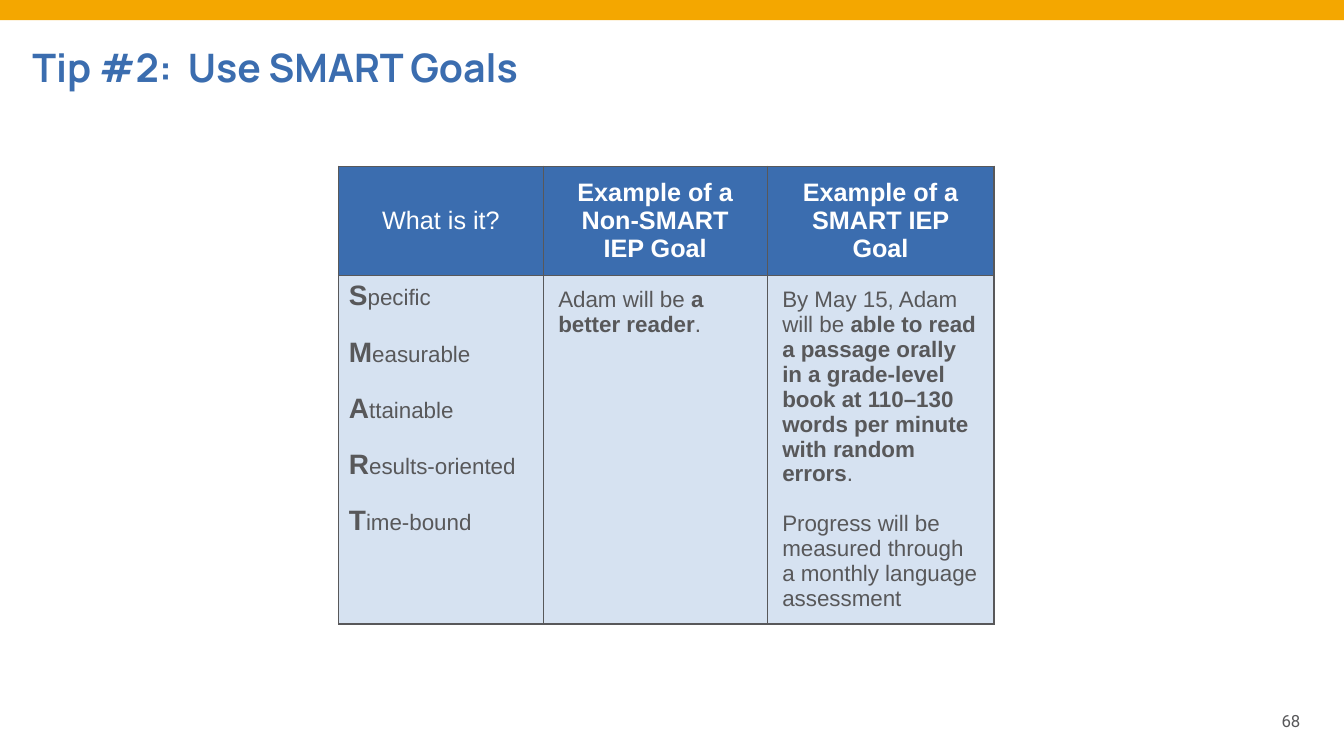
from dataclasses import dataclass

from lxml.etree import SubElement
from pptx import Presentation
from pptx.dml.color import RGBColor
from pptx.enum.shapes import MSO_SHAPE
from pptx.enum.text import MSO_ANCHOR, PP_ALIGN
from pptx.oxml.ns import qn
from pptx.util import Pt

BLUE, PALE, GOLD = "3B6DAF", "D6E2F1", "F4A700"
GREY, WHITE = "58585A", "FFFFFF"
GAP = 17.9  # space between paragraphs


@dataclass
class Piece:
    text: str
    size: float = 16
    bold: bool = False


@dataclass
class Entry:
    lines: list[list[Piece]]
    head: bool = False
    pad: tuple[float, float] = (10.8, 8.64)


def color(code: str) -> RGBColor:
    return RGBColor.from_string(code)


def style(run, size: float, face: str, code: str, bold: bool = False) -> None:
    run.font.size, run.font.name, run.font.bold = Pt(size), face, bold
    run.font.color.rgb = color(code)


def place(shape, left: float, top: float, width: float, height: float) -> None:
    shape.left, shape.top = Pt(left), Pt(top)
    shape.width, shape.height = Pt(width), Pt(height)


def edge(cell, code: str, width: float) -> None:
    """Give a cell the same line on all four sides, ahead of its fill."""
    props = cell._tc.get_or_add_tcPr()
    for spot, side in enumerate(("lnL", "lnR", "lnT", "lnB")):
        line = SubElement(props, qn(f"a:{side}"), w=str(Pt(width)))
        fill = SubElement(line, qn("a:solidFill"))
        SubElement(fill, qn("a:srgbClr"), val=code)
        props.insert(spot, line)


def draw(cell, entry: Entry) -> None:
    side, end = entry.pad
    cell.margin_left = cell.margin_right = Pt(side)
    cell.margin_top = cell.margin_bottom = Pt(end)
    cell.vertical_anchor = MSO_ANCHOR.MIDDLE if entry.head else MSO_ANCHOR.TOP
    cell.fill.solid()
    cell.fill.fore_color.rgb = color(BLUE if entry.head else PALE)
    edge(cell, GREY, 1)
    frame = cell.text_frame
    for row, line in enumerate(entry.lines):
        para = frame.add_paragraph() if row else frame.paragraphs[0]
        para.alignment = PP_ALIGN.CENTER if entry.head else PP_ALIGN.LEFT
        para.space_before = Pt(GAP if row else 0)
        for piece in line:
            run = para.add_run()
            run.text = piece.text
            style(run, piece.size, "Arial", WHITE if entry.head else GREY, piece.bold)


WORDS = ["Specific", "Measurable", "Attainable", "Results-oriented", "Time-bound"]
HEADS = [
    Entry([[Piece("What is it?", 18)]], True, (7.2, 3.6)),
    Entry([[Piece("Example of a Non-SMART IEP Goal", 18, True)]], True),
    Entry([[Piece("Example of a SMART IEP Goal", 18, True)]], True),
]
BODY = [
    Entry([[Piece(word[0], 20, True), Piece(word[1:])] for word in WORDS], pad=(7.2, 3.6)),
    Entry([[Piece("Adam will be "), Piece("a better reader", bold=True), Piece(".")]]),
    Entry([
        [
            Piece("By May 15, Adam will be "),
            Piece("able to read a passage orally in a grade-level book at "
                  "110–130 words per minute with random errors", bold=True),
            Piece("."),
        ],
        [Piece("Progress will be measured through a monthly language assessment")],
    ]),
]
COLS, ROWS = (146, 160, 162), (78, 249)


def main() -> None:
    deck = Presentation()
    deck.slide_width, deck.slide_height = Pt(960), Pt(540)
    slide = deck.slides.add_slide(deck.slide_layouts[5])
    shapes = slide.shapes

    # Top band
    band = shapes.add_shape(MSO_SHAPE.RECTANGLE, 0, 0, Pt(960), Pt(14.4))
    band.shadow.inherit = False
    band.fill.solid()
    band.fill.fore_color.rgb = color(GOLD)
    band.line.fill.background()

    # Title
    title = shapes.title
    place(title, 16, 24, 864, 44.6)
    frame = title.text_frame
    frame.text = "Tip #2:  Use SMART Goals"
    frame.vertical_anchor = MSO_ANCHOR.TOP
    frame.margin_left = frame.margin_right = Pt(7.2)
    frame.margin_top = frame.margin_bottom = Pt(7.2)
    frame.paragraphs[0].alignment = PP_ALIGN.LEFT
    style(frame.paragraphs[0].runs[0], 28, "Manrope", BLUE, True)

    # Goal table
    table = shapes.add_table(2, 3, Pt(242), Pt(118.8), Pt(sum(COLS)), Pt(sum(ROWS))).table
    table.first_row = table.horz_banding = False
    for col, width in zip(table.columns, COLS):
        col.width = Pt(width)
    for row, height, items in zip(table.rows, ROWS, (HEADS, BODY)):
        row.height = Pt(height)
        for cell, entry in zip(row.cells, items):
            draw(cell, entry)

    # Page number
    box = shapes.add_textbox(Pt(712), Pt(500.4), Pt(224), Pt(28.8))
    frame = box.text_frame
    frame.word_wrap = True
    frame.vertical_anchor = MSO_ANCHOR.MIDDLE
    frame.text = "68"
    frame.paragraphs[0].alignment = PP_ALIGN.RIGHT
    style(frame.paragraphs[0].runs[0], 12, "Roboto", GREY)

    deck.save("out.pptx")


if __name__ == "__main__":
    main()
